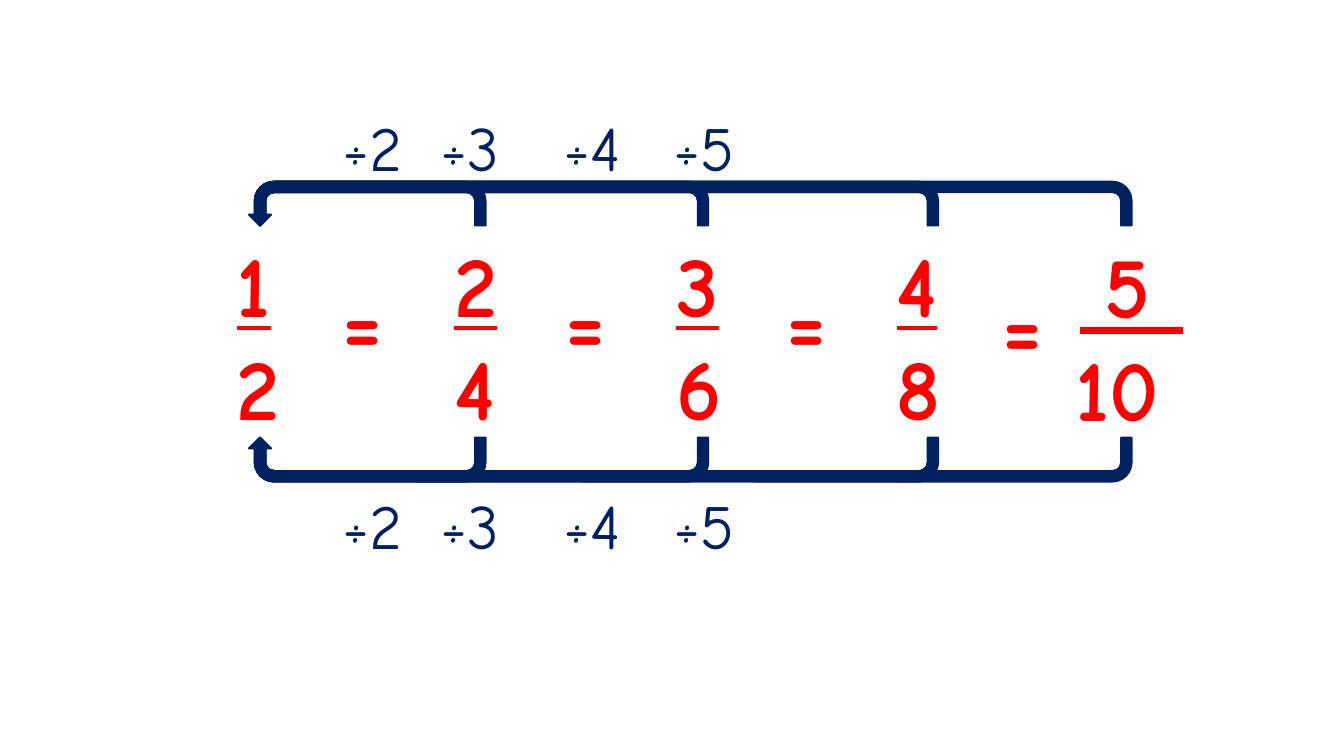
from dataclasses import dataclass

from lxml import etree
from pptx import Presentation
from pptx import util as u
from pptx.dml.color import RGBColor
from pptx.enum import shapes, text
from pptx.oxml import ns
from pptx.shapes.autoshape import Shape
from pptx.slide import Slide


@dataclass(frozen=True)
class Theme:
    font: str = "Comic Neue"
    fraction_color: RGBColor = RGBColor(0xFF, 0x00, 0x00)
    step_color: RGBColor = RGBColor(0x00, 0x20, 0x60)
    fraction_size: float = 61.7
    step_size: float = 44.9
    bar_width: float = 5
    arrow_outline: float = 1


@dataclass(frozen=True)
class Area:
    column: float
    row: float
    columns: float
    rows: float


@dataclass(frozen=True)
class Fraction:
    numerator: str
    denominator: str
    column: float


@dataclass(frozen=True)
class Step:
    label: str
    column: float
    arrow_columns: float


@dataclass(frozen=True)
class Side:
    arrow_row: float
    label_row: float
    flips: tuple[str, ...]


@dataclass(frozen=True)
class Line:
    content: str
    underline: bool = False


THEME = Theme()
CELL = u.Inches(0.1)
GRID_COLUMNS, GRID_ROWS = 133.33, 75
DIGIT_COLUMNS, LINE_ROWS, FRACTION_ROWS = 7.3, 11.4, 21.8
ARROW_COLUMN, ARROW_ROWS = 24.7, 4.4
ARROW_ADJUSTMENTS = (0.25, 0.25, 0.25, 0.44, 1)
LABEL_SHARE, LABEL_ROWS = 0.4, 8.6
BAR_ROW, BAR_START, BAR_END = 32.8, 107.1, 117.4

FRACTIONS = (
    Fraction("1", "2", 22.5),
    Fraction("2", "4", 44.1),
    Fraction("3", "6", 66.1),
    Fraction("4", "8", 88),
)
EQUALS = ((33, 26.1), (55.1, 26.1), (77, 26.1), (98.5, 26.5))
STEPS = (
    Step("÷2", 33, 23.5),
    Step("÷3", 42.7, 45.6),
    Step("÷4", 54.9, 68.4),
    Step("÷5", 65.8, 87.6),
)
SIDES = (
    Side(18, 10.3, ("flipH",)),
    Side(43.4, 47.8, ("flipH", "flipV")),
)


def cells(count: float) -> u.Emu:
    return u.Emu(round(count * CELL))


def bounds(area: Area) -> tuple[u.Emu, ...]:
    return tuple(cells(n) for n in (area.column, area.row, area.columns, area.rows))


def add_text(slide: Slide, area: Area, lines: tuple[Line, ...], size: float,
             color: RGBColor, bold: bool = False, wrap: bool = False) -> Shape:
    box = slide.shapes.add_textbox(*bounds(area))
    frame = box.text_frame
    frame.word_wrap = wrap
    frame.auto_size = text.MSO_AUTO_SIZE.SHAPE_TO_FIT_TEXT
    for index, line in enumerate(lines):
        paragraph = frame.add_paragraph() if index else frame.paragraphs[0]
        run = paragraph.add_run()
        run.text = line.content
        run.font.name = THEME.font
        run.font.size = u.Pt(size)
        run.font.bold = bold
        run.font.underline = line.underline
        run.font.color.rgb = color
    return box


def add_red_text(slide: Slide, area: Area, *lines: Line) -> Shape:
    return add_text(slide, area, lines, THEME.fraction_size, THEME.fraction_color, bold=True)


def add_fraction(slide: Slide, fraction: Fraction) -> None:
    area = Area(fraction.column, 22.4, DIGIT_COLUMNS, FRACTION_ROWS)
    add_red_text(slide, area, Line(fraction.numerator, underline=True),
                 Line(fraction.denominator))


def add_last_fraction(slide: Slide) -> None:
    row = cells(BAR_ROW)
    bar = slide.shapes.add_connector(
        shapes.MSO_CONNECTOR.STRAIGHT, cells(BAR_START), row, cells(BAR_END), row)
    bar.line.color.rgb = THEME.fraction_color
    bar.line.width = u.Pt(THEME.bar_width)
    etree.SubElement(bar._element.spPr, ns.qn("a:effectLst"))
    add_red_text(slide, Area(108.6, 22.5, DIGIT_COLUMNS, LINE_ROWS), Line("5"))
    add_red_text(slide, Area(105.7, BAR_ROW, 12.6, LINE_ROWS), Line("10"))


def add_step(slide: Slide, step: Step, side: Side) -> None:
    area = Area(ARROW_COLUMN, side.arrow_row, step.arrow_columns, ARROW_ROWS)
    arrow = slide.shapes.add_shape(shapes.MSO_SHAPE.U_TURN_ARROW, *bounds(area))
    for index, value in enumerate(ARROW_ADJUSTMENTS):
        arrow.adjustments[index] = value
    for flip in side.flips:
        arrow._element.spPr.xfrm.set(flip, "1")
    arrow.shadow.inherit = False
    arrow.fill.solid()
    arrow.fill.fore_color.rgb = THEME.step_color
    arrow.line.color.rgb = THEME.step_color
    arrow.line.width = u.Pt(THEME.arrow_outline)
    label = Area(step.column, side.label_row, step.arrow_columns * LABEL_SHARE, LABEL_ROWS)
    add_text(slide, label, (Line(step.label),), THEME.step_size, THEME.step_color, wrap=True)


def main() -> None:
    presentation = Presentation()
    presentation.slide_width = cells(GRID_COLUMNS)
    presentation.slide_height = cells(GRID_ROWS)
    slide = presentation.slides.add_slide(presentation.slide_layouts.get_by_name("Blank"))
    for fraction in FRACTIONS:
        add_fraction(slide, fraction)
    for column, row in EQUALS:
        add_red_text(slide, Area(column, row, DIGIT_COLUMNS, LINE_ROWS), Line("="))
    add_last_fraction(slide)
    for step in STEPS:
        for side in SIDES:
            add_step(slide, step, side)
    presentation.save("out.pptx")


if __name__ == "__main__":
    main()
